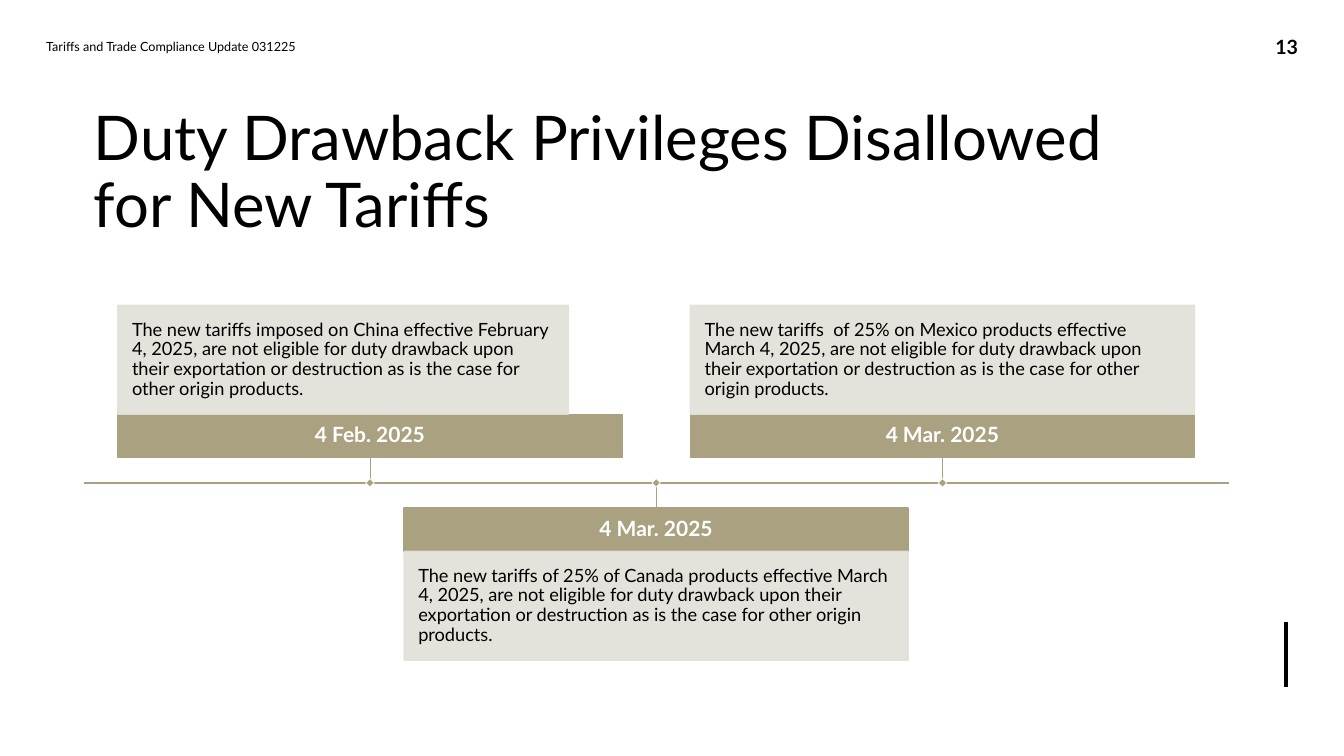
from dataclasses import dataclass

from lxml import etree
from pptx import Presentation
from pptx.dml.color import RGBColor
from pptx.enum import shapes, text
from pptx.oxml import ns
from pptx.util import Pt


@dataclass(frozen=True)
class Theme:
    font: str = "Lato"
    ink: str = "000000"
    paper: str = "FFFFFF"
    gold: str = "AAA180"
    sand: str = "E2E0D8"
    title: int = 44
    date: int = 15
    body: int = 13
    page: int = 14
    note: int = 9


T = Theme()
LEFT, MID = text.PP_ALIGN.LEFT, text.PP_ALIGN.CENTER


def write(shape, words, size, color, align=LEFT, bold=False, inset=None, space=0.9):
    """Put one styled run into a shape, centred vertically."""
    frame = shape.text_frame
    frame.word_wrap = True
    frame.auto_size = text.MSO_AUTO_SIZE.NONE
    frame.vertical_anchor = text.MSO_ANCHOR.MIDDLE
    if inset is not None:
        frame.margin_left = frame.margin_right = Pt(inset)
        frame.margin_top = frame.margin_bottom = Pt(inset)
    para = frame.paragraphs[0]
    para.alignment = align
    para.line_spacing = space
    run = para.add_run()
    run.text = words
    run.font.name = T.font
    run.font.size = Pt(size)
    run.font.bold = bold
    run.font.color.rgb = RGBColor.from_string(color)


def draw(kind, x, y, w, h, fill, edge, width):
    """Add a rectangle, or a line when kind is a connector type."""
    if isinstance(kind, shapes.MSO_CONNECTOR):
        item = slide.shapes.add_connector(kind, Pt(x), Pt(y), Pt(x + w), Pt(y + h))
        etree.SubElement(item._element.spPr, ns.qn("a:effectLst"))
    else:
        item = slide.shapes.add_shape(kind, Pt(x), Pt(y), Pt(w), Pt(h))
        item.shadow.inherit = False
        item.fill.solid()
        item.fill.fore_color.rgb = RGBColor.from_string(fill)
    item.line.color.rgb = RGBColor.from_string(edge)
    item.line.width = Pt(width)
    return item


RECT, LINE = shapes.MSO_SHAPE.RECTANGLE, shapes.MSO_CONNECTOR.STRAIGHT

deck = Presentation()
deck.slide_width, deck.slide_height = Pt(960), Pt(540)
slide = deck.slides.add_slide(deck.slide_layouts[5])

# Title and page furniture
title = slide.shapes.title
title.left, title.top, title.width, title.height = Pt(59.76), Pt(67.68), Pt(755.28), Pt(113.04)
write(title, "Duty Drawback Privileges Disallowed for New Tariffs", T.title, T.ink)

head = slide.shapes.add_textbox(Pt(25.92), Pt(18.72), Pt(324), Pt(28.8))
write(head, "Tariffs and Trade Compliance Update 031225", T.note, T.ink, space=1.0)
page = slide.shapes.add_textbox(Pt(889.2), Pt(18.72), Pt(59.76), Pt(28.8))
write(page, "13", T.page, T.ink, MID, bold=True, space=1.0)
draw(LINE, 918.72, 444.24, 0, 46.8, None, T.ink, 3)

# Timeline: events alternate above and below the axis
AXIS, STEM = 344.88, 18
FIRST, STEP = 84.24, 204.48
WIDE, BAND, BOX, DOT = 360, 30.96, 77.76, 4.32
draw(LINE, 59.76, AXIS, 818, 0, None, T.gold, 1)

TAIL = (" 4, 2025, are not eligible for duty drawback upon their exportation"
        " or destruction as is the case for other origin products.")
events = [
    ("4 Feb. 2025", "The new tariffs imposed on China effective February", 321.84),
    ("4 Mar. 2025", "The new tariffs of 25% of Canada products effective March", WIDE),
    ("4 Mar. 2025", "The new tariffs  of 25% on Mexico products effective March", WIDE),
]

for i, (date, lead, wide) in enumerate(events):
    above = i % 2 == 0
    left = FIRST + i * STEP
    mid = left + WIDE / 2
    top = AXIS - STEM - BAND if above else AXIS + STEM

    band = draw(RECT, left, top, WIDE, BAND, T.gold, T.gold, 1)
    write(band, date, T.date, T.paper, MID, bold=True, inset=5.76)

    box = draw(RECT, left, top - BOX if above else top + BAND, wide, BOX, T.sand, T.sand, 1)
    for tint in box._element.spPr.iter(ns.qn("a:srgbClr")):
        etree.SubElement(tint, ns.qn("a:alpha"), val="90000")
    write(box, lead + TAIL, T.body, T.ink, inset=10.08)

    edge = top + BAND if above else top
    stem = draw(LINE, mid, edge, 0, AXIS - edge, None, T.gold, 0.5)
    stem.begin_connect(band, 2 if above else 0)

    dot = draw(RECT, mid - DOT / 2, AXIS - DOT / 2, DOT, DOT, T.gold, T.paper, 0.5)
    dot.rotation = 45

deck.save("out.pptx")
